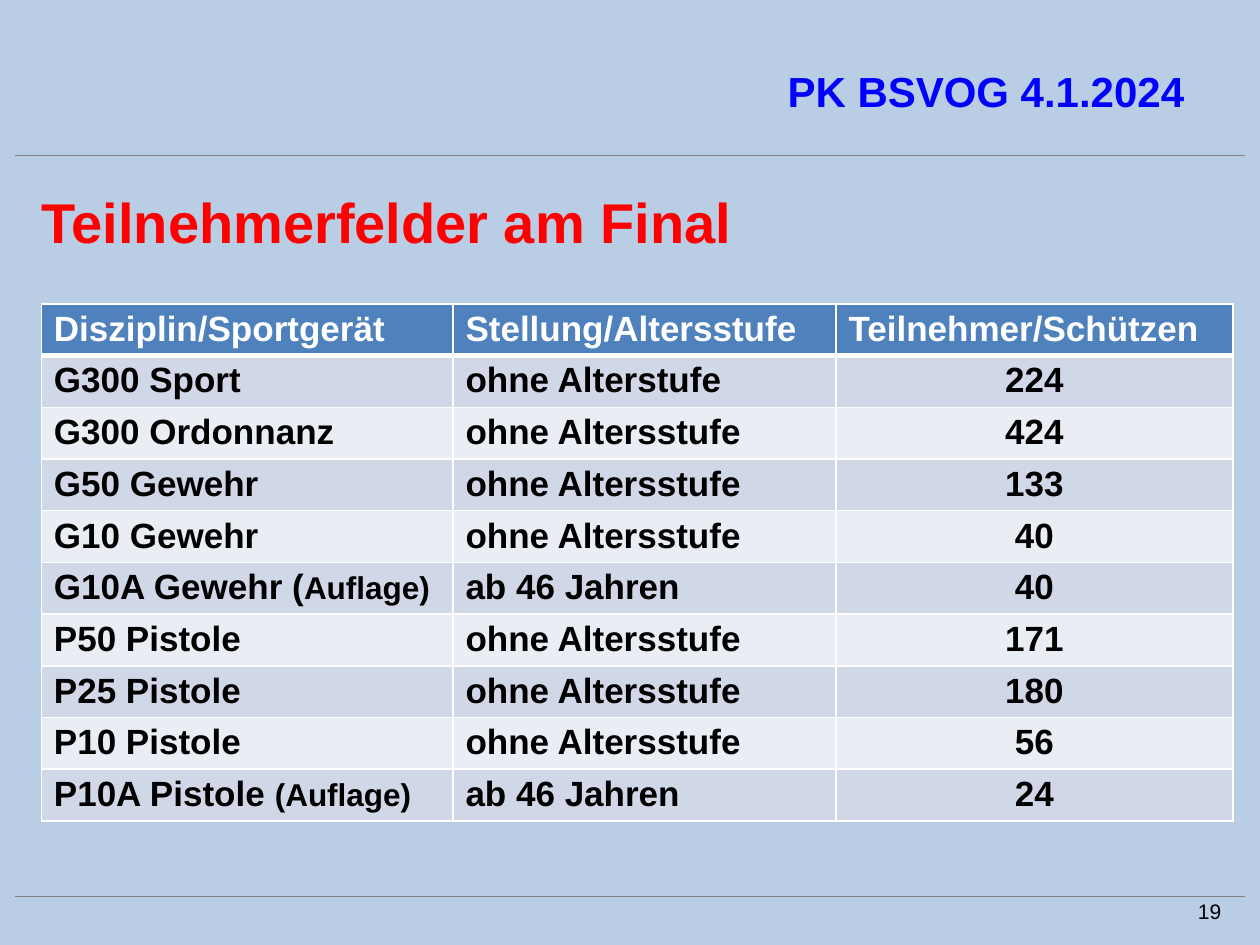
from lxml import etree
from pptx import Presentation
from pptx.dml.color import RGBColor
from pptx.enum import shapes, text
from pptx.oxml import ns
from pptx.util import Pt

theme = {
    "font": "Arial",
    "background": "B9CDE5",
    "rule": "808080",
    "heading": {"size": 24, "bold": True, "color": "0000FF"},
    "topic": {"size": 32, "bold": True, "color": "FF0000"},
    "header": {"size": 20, "bold": True, "color": "FFFFFF"},
    "entry": {"size": 20, "bold": True, "color": "000000"},
    "remark": {"size": 18, "bold": True, "color": "000000"},
    "number": {"size": 12, "bold": False, "color": "000000"},
    "header_fill": "4F81BD",
    "bands": ("D0D8E8", "E9EDF4"),
    "border": "FFFFFF",
}


def add_text(paragraph, words, style):
    run = paragraph.add_run()
    run.text = words
    values = {"name": theme["font"], "size": Pt(style["size"]), "bold": style["bold"]}
    for attribute, value in values.items():
        setattr(run.font, attribute, value)
    run.font.color.rgb = RGBColor.from_string(style["color"])


def add_border(cell, side, width):
    line = etree.SubElement(cell._tc.get_or_add_tcPr(), ns.qn(f"a:ln{side}"), w=str(Pt(width)))
    fill = etree.SubElement(line, ns.qn("a:solidFill"))
    etree.SubElement(fill, ns.qn("a:srgbClr"), val=theme["border"])


deck = Presentation()
deck.slide_width, deck.slide_height = Pt(720), Pt(540)
slide = deck.slides.add_slide(deck.slide_layouts[1])
slide.background.fill.solid()
slide.background.fill.fore_color.rgb = RGBColor.from_string(theme["background"])

for height in (511.9, 88.6):
    rule = slide.shapes.add_connector(
        shapes.MSO_CONNECTOR.STRAIGHT, Pt(8.6), Pt(height), Pt(711.4), Pt(height))
    rule.line.color.rgb = RGBColor.from_string(theme["rule"])
    rule.line.width = Pt(0.25)
    etree.SubElement(rule._element.spPr, ns.qn("a:effectLst"))

heading = slide.shapes.title
topic = slide.placeholders[1]
page_number = slide.shapes.add_textbox(0, 0, 0, 0)

text_parts = (
    (heading, "PK BSVOG 4.1.2024", "heading", (167, 31.7, 517, 51.1), 6, text.PP_ALIGN.RIGHT),
    (topic, "Teilnehmerfelder am Final", "topic", (16.6, 100, 686.2, 339.8), 7, text.PP_ALIGN.LEFT),
    (page_number, "19", "number", (677.5, 509.8, 38.2, 21.6), 3.6, text.PP_ALIGN.LEFT),
)
for part, words, style, box, top_margin, alignment in text_parts:
    for attribute, value in zip(("left", "top", "width", "height"), box):
        setattr(part, attribute, Pt(value))
    frame_format = {
        "word_wrap": part is not page_number,
        "auto_size": text.MSO_AUTO_SIZE.NONE,
        "vertical_anchor": text.MSO_ANCHOR.TOP,
        "margin_top": Pt(top_margin),
    }
    for attribute, value in frame_format.items():
        setattr(part.text_frame, attribute, value)
    paragraph = part.text_frame.paragraphs[0]
    paragraph.alignment = alignment
    paragraph.space_before = Pt(0)
    add_text(paragraph, words, theme[style])

topic_format = topic.text_frame.paragraphs[0]._p.get_or_add_pPr()
topic_format.set("marL", str(Pt(35)))
topic_format.set("indent", str(Pt(-35)))
etree.SubElement(topic_format, ns.qn("a:buNone"))

participants = (
    ("Disziplin/Sportgerät", "", "Stellung/Altersstufe", "Teilnehmer/Schützen"),
    ("G300 Sport", "", "ohne Alterstufe", "224"),
    ("G300 Ordonnanz", "", "ohne Altersstufe", "424"),
    ("G50 Gewehr", "", "ohne Altersstufe", "133"),
    ("G10 Gewehr", "", "ohne Altersstufe", "40"),
    ("G10A Gewehr (", "Auflage)", "ab 46 Jahren", "40"),
    ("P50 Pistole", "", "ohne Altersstufe", "171"),
    ("P25 Pistole", "", "ohne Altersstufe", "180"),
    ("P10 Pistole", "", "ohne Altersstufe", "56"),
    ("P10A Pistole ", "(Auflage)", "ab 46 Jahren", "24"),
)
column_widths = (235.2, 218.9, 226.8)
row_height = 29.54
field = slide.shapes.add_table(
    len(participants), len(column_widths), Pt(23.6), Pt(173.7),
    Pt(sum(column_widths)), Pt(row_height * len(participants))).table
for column, width in zip(field.columns, column_widths):
    column.width = Pt(width)

for row_index, (discipline, remark, age_group, count) in enumerate(participants):
    field.rows[row_index].height = Pt(row_height)
    is_header = row_index == 0
    fill = theme["header_fill"] if is_header else theme["bands"][(row_index - 1) % 2]
    for column_index, words in enumerate((discipline, age_group, count)):
        cell = field.cell(row_index, column_index)
        cell.margin_top = cell.margin_bottom = Pt(3.2)
        borders = {"L": 1, "R": 1, "T": 3 if row_index == 1 else 1, "B": 3 if is_header else 1}
        for side, width in borders.items():
            add_border(cell, side, width)
        cell.fill.solid()
        cell.fill.fore_color.rgb = RGBColor.from_string(fill)
        paragraph = cell.text_frame.paragraphs[0]
        add_text(paragraph, words, theme["header" if is_header else "entry"])
        if column_index == 0 and remark:
            add_text(paragraph, remark, theme["remark"])
        if column_index == 2 and not is_header:
            paragraph.alignment = text.PP_ALIGN.CENTER

deck.save("out.pptx")
